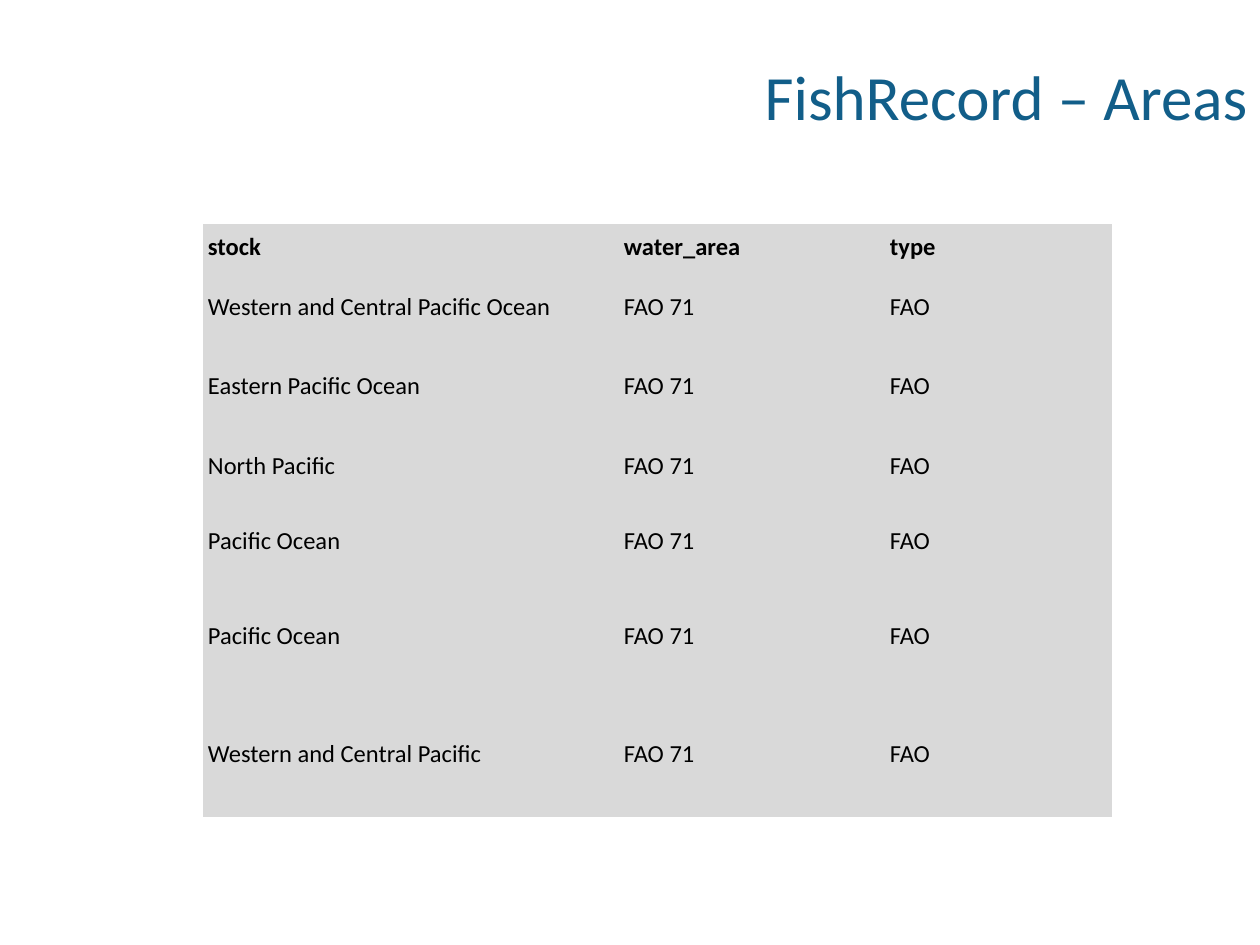
"""Build a slide listing the water areas of Pacific fish stocks."""
from dataclasses import dataclass

from pptx import Presentation
from pptx.dml.color import RGBColor
from pptx.enum.text import MSO_ANCHOR, PP_ALIGN
from pptx.oxml.ns import qn
from pptx.util import Pt

MIDDLE = MSO_ANCHOR.MIDDLE
RIGHT = PP_ALIGN.RIGHT
PX = 914400 // 126
NO_GRID_STYLE = "{2D5ABB26-0587-4C30-8999-92F81FD0307C}"

TITLE = "FishRecord – Areas"
HEADER = ("stock", "water_area", "type")
STOCKS = (
    "Western and Central Pacific Ocean",
    "Eastern Pacific Ocean",
    "North Pacific",
    "Pacific Ocean",
    "Pacific Ocean",
    "Western and Central Pacific",
)
ROWS = [HEADER] + [(stock, "FAO 71", "FAO") for stock in STOCKS]

SLIDE_SIZE = (1260, 945)
TITLE_BOX = (357, 16, 903, 158)
TABLE_ORIGIN = (203, 224)
COLUMN_WIDTHS = (416, 266, 227)
ROW_HEIGHTS = (47, 72, 87, 72, 79, 110, 126)
CELL_INSETS = (5, 3)


@dataclass(frozen=True)
class Theme:
    font: str = "Calibri"
    title_size: int = 36
    table_size: int = 14
    title: str = "125E89"
    text: str = "000000"
    cell: str = "D9D9D9"


THEME = Theme()


def emu(lengths):
    return [length * PX for length in lengths]


def style_font(paragraph, size, color, bold=False):
    font = paragraph.font
    font.name = THEME.font
    font.size = Pt(size)
    font.bold = bold
    font.color.rgb = RGBColor.from_string(color)


def place_title(slide):
    title = slide.shapes.title
    title.left, title.top, title.width, title.height = emu(TITLE_BOX)
    frame = title.text_frame
    frame.text = TITLE
    frame.vertical_anchor = MIDDLE
    heading = frame.paragraphs[0]
    heading.alignment = RIGHT
    style_font(heading, THEME.title_size, THEME.title)


def fill_cell(cell, text, bold):
    cell.text = text
    cell.vertical_anchor = MIDDLE
    cell.margin_left, cell.margin_top = emu(CELL_INSETS)
    cell.margin_right, cell.margin_bottom = emu(CELL_INSETS)
    cell.fill.solid()
    cell.fill.fore_color.rgb = RGBColor.from_string(THEME.cell)
    style_font(cell.text_frame.paragraphs[0], THEME.table_size, THEME.text, bold)


def add_areas(slide):
    extent = (sum(COLUMN_WIDTHS), sum(ROW_HEIGHTS))
    areas = slide.shapes.add_table(
        len(ROWS), len(HEADER), *emu(TABLE_ORIGIN + extent)
    ).table
    areas.first_row = areas.horz_banding = False
    areas._tbl.tblPr.find(qn("a:tableStyleId")).text = NO_GRID_STYLE
    for column, width in zip(areas.columns, emu(COLUMN_WIDTHS)):
        column.width = width
    for row, height, texts in zip(areas.rows, emu(ROW_HEIGHTS), ROWS):
        row.height = height
        for cell, text in zip(row.cells, texts):
            fill_cell(cell, text, texts is HEADER)


def main():
    deck = Presentation()
    deck.slide_width, deck.slide_height = emu(SLIDE_SIZE)
    slide = deck.slides.add_slide(deck.slide_layouts.get_by_name("Title Only"))
    place_title(slide)
    add_areas(slide)
    deck.save("out.pptx")


if __name__ == "__main__":
    main()
